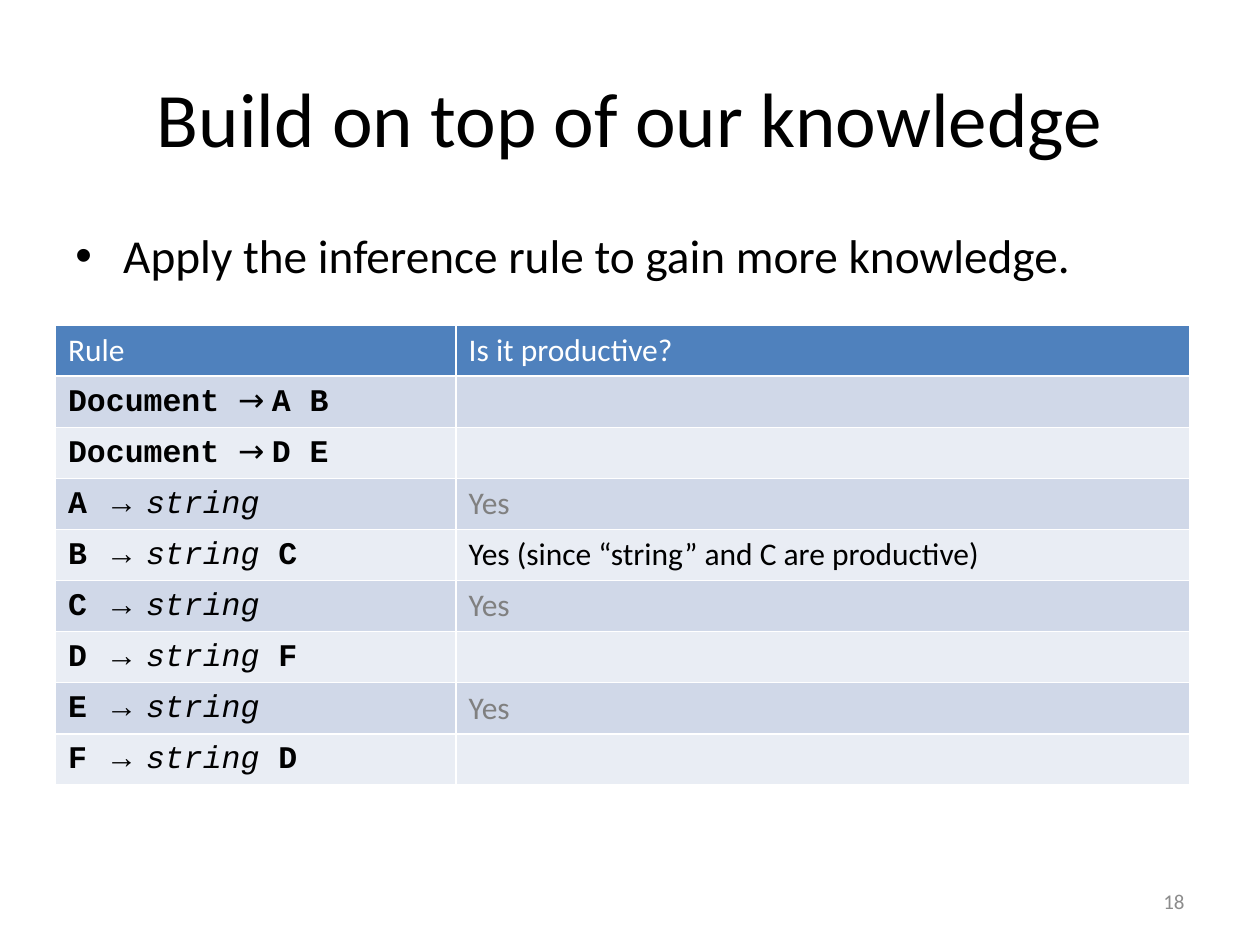
"""Build the slide on productive grammar rules: title, one bullet and a rule table."""
from lxml.etree import SubElement
from pptx import Presentation
from pptx.dml.color import RGBColor
from pptx.enum.text import MSO_ANCHOR as Anchor, PP_ALIGN as Align
from pptx.oxml.ns import qn
from pptx.util import Inches, Pt

BLACK = RGBColor(0x00, 0x00, 0x00)
WHITE = RGBColor(0xFF, 0xFF, 0xFF)
GRAY = RGBColor(0x80, 0x80, 0x80)
NUMBER_GRAY = RGBColor(0x8C, 0x8C, 0x8C)
HEADER_BLUE = RGBColor(0x4F, 0x81, 0xBD)
BANDS = [RGBColor(0xE9, 0xED, 0xF4), RGBColor(0xD0, 0xD8, 0xE8)]
CODE = "Courier New"
MARGIN = 0.5
CONTENT_WIDTH = 9


def add_text(para, text, size=18, font="Calibri", color=BLACK, bold=False, italic=False):
    span = para.add_run()
    span.text = text
    span.font.size = Pt(size)
    span.font.name = font
    span.font.color.rgb = color
    span.font.bold = bold
    span.font.italic = italic


def style_cell(cell, fill):
    properties = cell._tc.get_or_add_tcPr()
    for side in ("lnL", "lnR", "lnT", "lnB"):
        border = SubElement(properties, qn(f"a:{side}"), w=str(Pt(1)))
        paint = SubElement(border, qn("a:solidFill"))
        SubElement(paint, qn("a:srgbClr"), val=str(WHITE))
    cell.fill.solid()
    cell.fill.fore_color.rgb = fill


deck = Presentation()
deck.slide_width, deck.slide_height = Inches(10), Inches(7.5)
page = deck.slides.add_slide(deck.slide_layouts[5])

title = page.shapes.title
title.left, title.top = Inches(MARGIN), Inches(0.3)
title.width, title.height = Inches(CONTENT_WIDTH), Inches(1.25)
title.text_frame.vertical_anchor = Anchor.MIDDLE
heading = title.text_frame.paragraphs[0]
heading.alignment = Align.CENTER
add_text(heading, "Build on top of our knowledge", size=44)

number_box = page.shapes.add_textbox(Inches(7.17), Inches(6.95), Inches(2.33), Inches(0.4))
number_box.text_frame.word_wrap = True
number_box.text_frame.vertical_anchor = Anchor.MIDDLE
number = number_box.text_frame.paragraphs[0]
number.alignment = Align.RIGHT
add_text(number, "18", size=12, color=NUMBER_GRAY)

bullet_box = page.shapes.add_textbox(
    Inches(MARGIN), Inches(1.75), Inches(CONTENT_WIDTH), Inches(0.83))
bullet_box.text_frame.word_wrap = True
bullet = bullet_box.text_frame.paragraphs[0]
bullet.space_before = Pt(5.4)
indent = Inches(0.38)
bullet_format = bullet._p.get_or_add_pPr()
bullet_format.set("marL", str(indent))
bullet_format.set("indent", str(-indent))
SubElement(bullet_format, qn("a:buFont"), typeface="Arial")
SubElement(bullet_format, qn("a:buChar"), char="•")
add_text(bullet, "Apply the inference rule to gain more knowledge.", size=27)

rules = [
    ("Document", "", "A B", ""),
    ("Document", "", "D E", ""),
    ("A", "string", "", "Yes"),
    ("B", "string", " C", "Yes (since “string” and C are productive)"),
    ("C", "string", "", "Yes"),
    ("D", "string", " F", ""),
    ("E", "string", "", "Yes"),
    ("F", "string", " D", ""),
]
table = page.shapes.add_table(
    len(rules) + 1, 2, Inches(0.44), Inches(2.58), Inches(CONTENT_WIDTH), Inches(3.65)).table
for column, width in zip(table.columns, (3.18, 5.82)):
    column.width = Inches(width)

for cell, label in zip(table.rows[0].cells, ("Rule", "Is it productive?")):
    style_cell(cell, HEADER_BLUE)
    add_text(cell.text_frame.paragraphs[0], label, color=WHITE)

for row, (symbol, terminal, symbols, answer) in enumerate(rules, start=1):
    rule_cell, answer_cell = table.rows[row].cells
    for cell in (rule_cell, answer_cell):
        style_cell(cell, BANDS[row % 2])
    para = rule_cell.text_frame.paragraphs[0]
    add_text(para, f"{symbol} ", font=CODE, bold=True)
    add_text(para, "→ ", font="Arial" if terminal else "Roboto Condensed")
    if terminal:
        add_text(para, terminal, font=CODE, italic=True)
    if symbols:
        add_text(para, symbols, font=CODE, bold=True)
    if answer:
        add_text(answer_cell.text_frame.paragraphs[0], answer,
                 color=GRAY if answer == "Yes" else BLACK)

deck.save("out.pptx")
